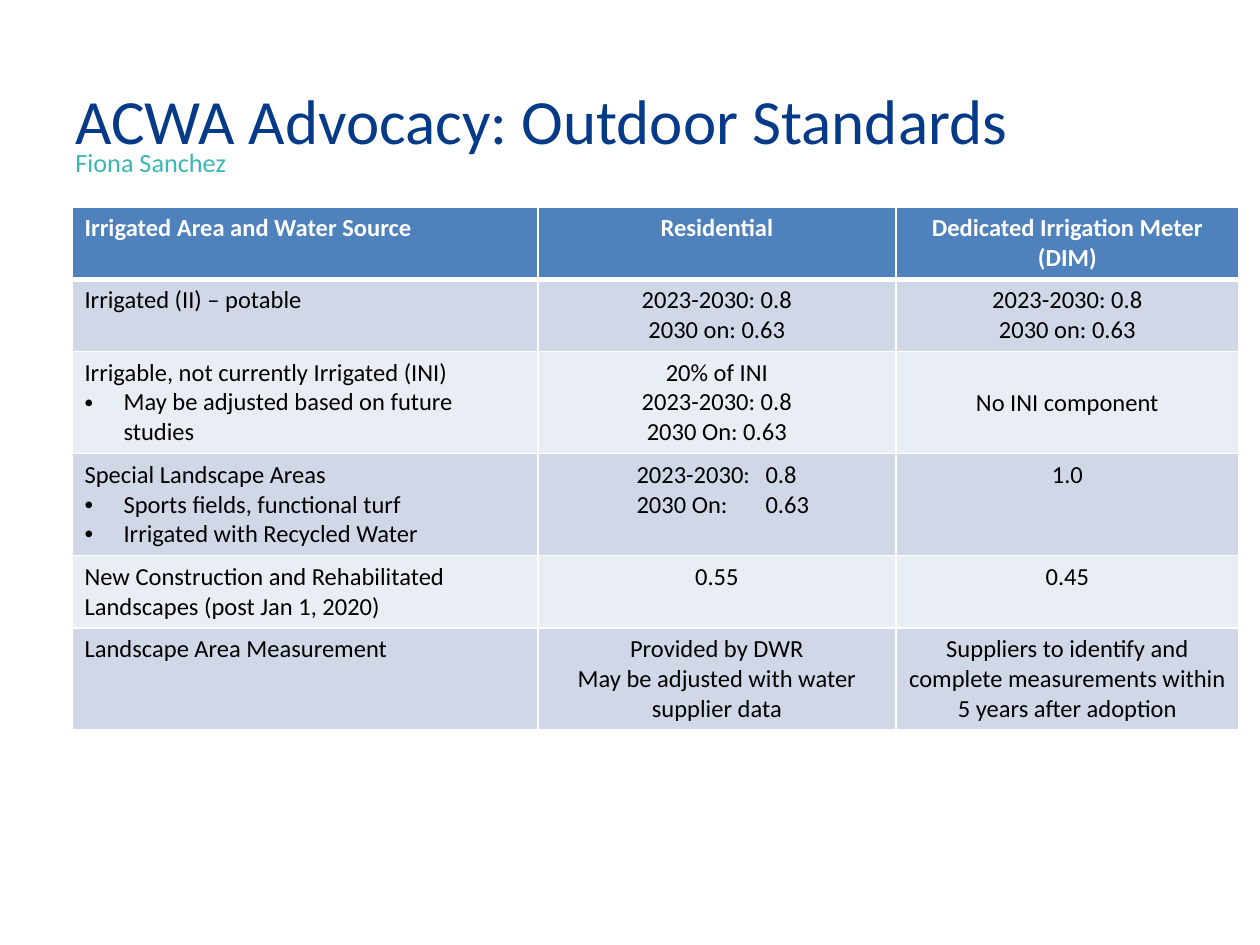
"""Build the outdoor water standards slide with its comparison table."""
from pptx import Presentation
from pptx.dml.color import RGBColor
from pptx.enum.text import MSO_ANCHOR as Anchor, PP_ALIGN as Align
from pptx.oxml import parse_xml
from pptx.oxml.ns import nsdecls
from pptx.util import Pt

PX = 914400 / 126


def px(length):
    return round(length * PX)


def style(paragraph, size, colour, bold=False):
    for run in paragraph.runs:
        run.font.name = "Calibri"
        run.font.size = Pt(size)
        run.font.bold = bold
        run.font.color.rgb = RGBColor.from_string(colour)


prs = Presentation()
prs.slide_width, prs.slide_height = px(1260), px(945)
slide = prs.slides.add_slide(prs.slide_layouts[6])

rows = [
    ["Irrigated Area and Water Source", "Residential", "Dedicated Irrigation Meter (DIM)"],
    ["Irrigated (II) – potable"] + ["2023-2030: 0.8\v2030 on: 0.63"] * 2,
    ["Irrigable, not currently Irrigated (INI)\n• May be adjusted based on future studies",
     "20% of INI\v2023-2030: 0.8\v2030 On: 0.63", "No INI component"],
    ["Special Landscape Areas\n• Sports fields, functional turf\n• Irrigated with Recycled Water",
     "2023-2030:\t0.8\n2030 On:\t0.63", "1.0"],
    ["New Construction and Rehabilitated Landscapes (post Jan 1, 2020)", "0.55", "0.45"],
    ["Landscape Area Measurement", "Provided by DWR\vMay be adjusted with water supplier data",
     "Suppliers to identify and complete measurements within 5 years after adoption"],
]
column_widths = [466, 358, 343]
row_heights = [72, 72, 102, 102, 72, 102]
standards = slide.shapes.add_table(
    len(rows), len(column_widths), px(72), px(207),
    px(sum(column_widths)), px(sum(row_heights))).table
for column, width in zip(standards.columns, column_widths):
    column.width = px(width)

for r, texts in enumerate(rows):
    standards.rows[r].height = px(row_heights[r])
    for c, text in enumerate(texts):
        cell = standards.cell(r, c)
        for side in ("L", "R", "T", "B"):
            thick = (r, side) in ((0, "B"), (1, "T"))
            cell._tc.get_or_add_tcPr().append(parse_xml(
                f'<a:ln{side} {nsdecls("a")} w="{Pt(3 if thick else 1)}"><a:solidFill>'
                f'<a:srgbClr val="FFFFFF"/></a:solidFill></a:ln{side}>'))
        cell.fill.solid()
        fill = "4F81BD" if r == 0 else "D0D8E8" if r % 2 else "E9EDF4"
        cell.fill.fore_color.rgb = RGBColor.from_string(fill)
        if text == "No INI component":
            cell.vertical_anchor = Anchor.MIDDLE
        cell.text_frame.text = text
        for line in cell.text_frame.paragraphs:
            line.alignment = Align.CENTER if c else Align.LEFT
            properties = line._p.get_or_add_pPr()
            if line.text.startswith("• "):
                line.text = line.text[2:]
                properties.set("marL", str(px(39)))
                properties.set("indent", str(px(-39)))
                properties.append(parse_xml(f'<a:buFont {nsdecls("a")} typeface="Arial"/>'))
                properties.append(parse_xml(f'<a:buChar {nsdecls("a")} char="•"/>'))
            elif "\t" in line.text:
                line.alignment = Align.LEFT
                properties.set("marL", str(px(215)))
                properties.set("indent", str(px(-129)))
            style(line, 14, "000000" if r else "FFFFFF", r == 0)

headings = [
    ("ACWA Advocacy: Outdoor Standards", 29, 134, Anchor.BOTTOM, 36, "053A88", Pt(36)),
    ("Fiona Sanchez", 144, 44, Anchor.TOP, 15, "3BB6B3", 0.9),
]
for text, top, height, anchor, size, colour, spacing in headings:
    frame = slide.shapes.add_textbox(px(63), px(top), px(1134), px(height)).text_frame
    frame.word_wrap = True
    frame.vertical_anchor = anchor
    frame.text = text
    heading = frame.paragraphs[0]
    heading.line_spacing = spacing
    style(heading, size, colour)

prs.save("out.pptx")
